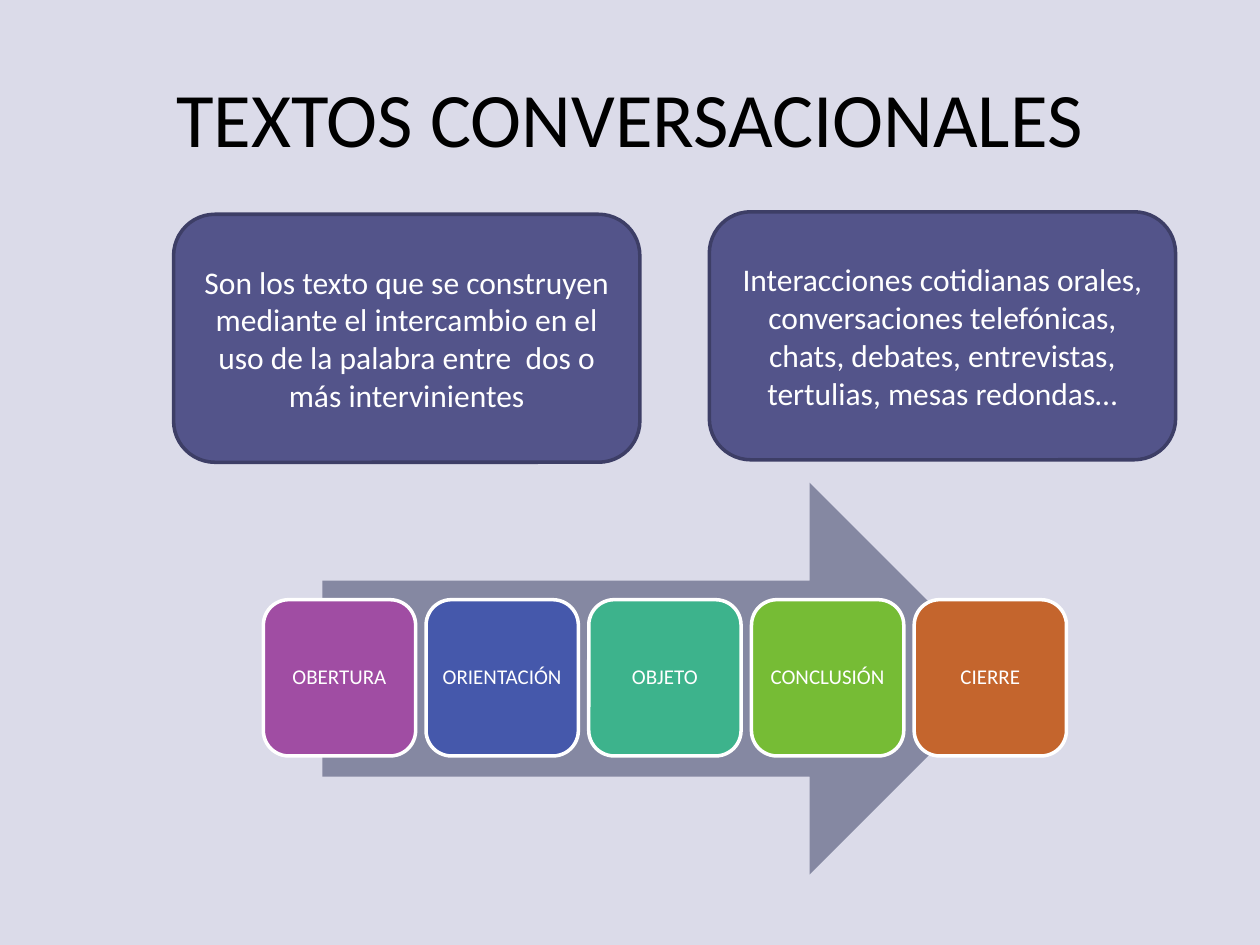
"""Build the slide on conversational texts."""
from dataclasses import dataclass

import pptx
import pptx.dml.color
import pptx.enum.shapes
import pptx.enum.text
import pptx.shapes.autoshape
import pptx.shapes.shapetree
import pptx.text.text
import pptx.util

Cm = pptx.util.Cm
Shapes = pptx.shapes.shapetree.SlideShapes | pptx.shapes.shapetree.GroupShapes
Preset = pptx.enum.shapes.MSO_SHAPE


@dataclass(frozen=True)
class Theme:
    font: str = "Calibri"
    background: str = "DBDBE9"
    title: str = "000000"
    light: str = "FFFFFF"
    arrow: str = "8588A2"
    idea: str = "53548A"
    idea_edge: str = "3D3E66"
    title_size: float = 44
    idea_size: float = 18
    step_size: float = 12
    edge_width: float = 2


@dataclass(frozen=True)
class Frame:
    left: float
    top: float
    width: float
    height: float

    def lengths(self) -> tuple[int, int, int, int]:
        return Cm(self.left), Cm(self.top), Cm(self.width), Cm(self.height)


@dataclass(frozen=True)
class Box:
    frame: Frame
    text: str
    fill: str
    edge: str
    size: float
    margin: float
    spacing: float = 1.0


THEME = Theme()
TITLE_FRAME = Frame(1.27, 0.76, 22.86, 3.18)
ARROW_FRAME = Frame(6.5, 9.73, 13.77, 7.9)
FIRST_STEP = Frame(5.31, 12.09, 3.07, 3.15)
STEP_PITCH = 3.28

STEPS = [
    ("OBERTURA", "A04DA3"),
    ("ORIENTACIÓN", "4558AB"),
    ("OBJETO", "3DB38C"),
    ("CONCLUSIÓN", "76BC35"),
    ("CIERRE", "C4652D"),
]
IDEAS = [
    (Frame(3.5, 4.32, 9.4, 5), "Son los texto que se construyen mediante el intercambio "
     "en el uso de la palabra entre  dos o más intervinientes"),
    (Frame(14.3, 4.27, 9.4, 5), "Interacciones cotidianas orales, conversaciones telefónicas, "
     "chats, debates, entrevistas, tertulias, mesas redondas…"),
]


def rgb(value: str) -> pptx.dml.color.RGBColor:
    return pptx.dml.color.RGBColor.from_string(value)


def write(frame: pptx.text.text.TextFrame, text: str, size: float, color: str,
          spacing: float = 1.0) -> None:
    frame.word_wrap = True
    frame.vertical_anchor = pptx.enum.text.MSO_ANCHOR.MIDDLE
    paragraph = frame.paragraphs[0]
    paragraph.alignment = pptx.enum.text.PP_ALIGN.CENTER
    paragraph.line_spacing = spacing
    run = paragraph.add_run()
    run.text = text
    run.font.name = THEME.font
    run.font.size = pptx.util.Pt(size)
    run.font.color.rgb = rgb(color)


def add_filled(shapes: Shapes, preset: Preset, frame: Frame,
               fill: str) -> pptx.shapes.autoshape.Shape:
    shape = shapes.add_shape(preset, *frame.lengths())
    shape.shadow.inherit = False
    shape.fill.solid()
    shape.fill.fore_color.rgb = rgb(fill)
    return shape


def add_box(shapes: Shapes, box: Box) -> None:
    shape = add_filled(shapes, Preset.ROUNDED_RECTANGLE, box.frame, box.fill)
    shape.line.color.rgb = rgb(box.edge)
    shape.line.width = pptx.util.Pt(THEME.edge_width)
    label = shape.text_frame
    label.margin_left = label.margin_right = Cm(box.margin)
    label.margin_top = label.margin_bottom = Cm(0.13)
    write(label, box.text, box.size, THEME.light, box.spacing)


def add_process(shapes: Shapes) -> None:
    process = shapes.add_group_shape().shapes
    arrow = add_filled(process, Preset.RIGHT_ARROW, ARROW_FRAME, THEME.arrow)
    arrow.line.fill.background()
    for index, (text, fill) in enumerate(STEPS):
        frame = Frame(FIRST_STEP.left + index * STEP_PITCH, FIRST_STEP.top,
                      FIRST_STEP.width, FIRST_STEP.height)
        add_box(process, Box(frame, text, fill, THEME.light, THEME.step_size, 0.13, 0.9))


def main() -> None:
    presentation = pptx.Presentation()
    presentation.slide_width = Cm(25.4)
    presentation.slide_height = Cm(19.05)
    slide = presentation.slides.add_slide(presentation.slide_layouts.get_by_name("Title Only"))
    slide.background.fill.solid()
    slide.background.fill.fore_color.rgb = rgb(THEME.background)

    title = slide.shapes.title
    title.left, title.top, title.width, title.height = TITLE_FRAME.lengths()
    write(title.text_frame, "TEXTOS CONVERSACIONALES", THEME.title_size, THEME.title)

    add_process(slide.shapes)
    for frame, text in IDEAS:
        add_box(slide.shapes,
                Box(frame, text, THEME.idea, THEME.idea_edge, THEME.idea_size, 0.25))
    presentation.save("out.pptx")


if __name__ == "__main__":
    main()
